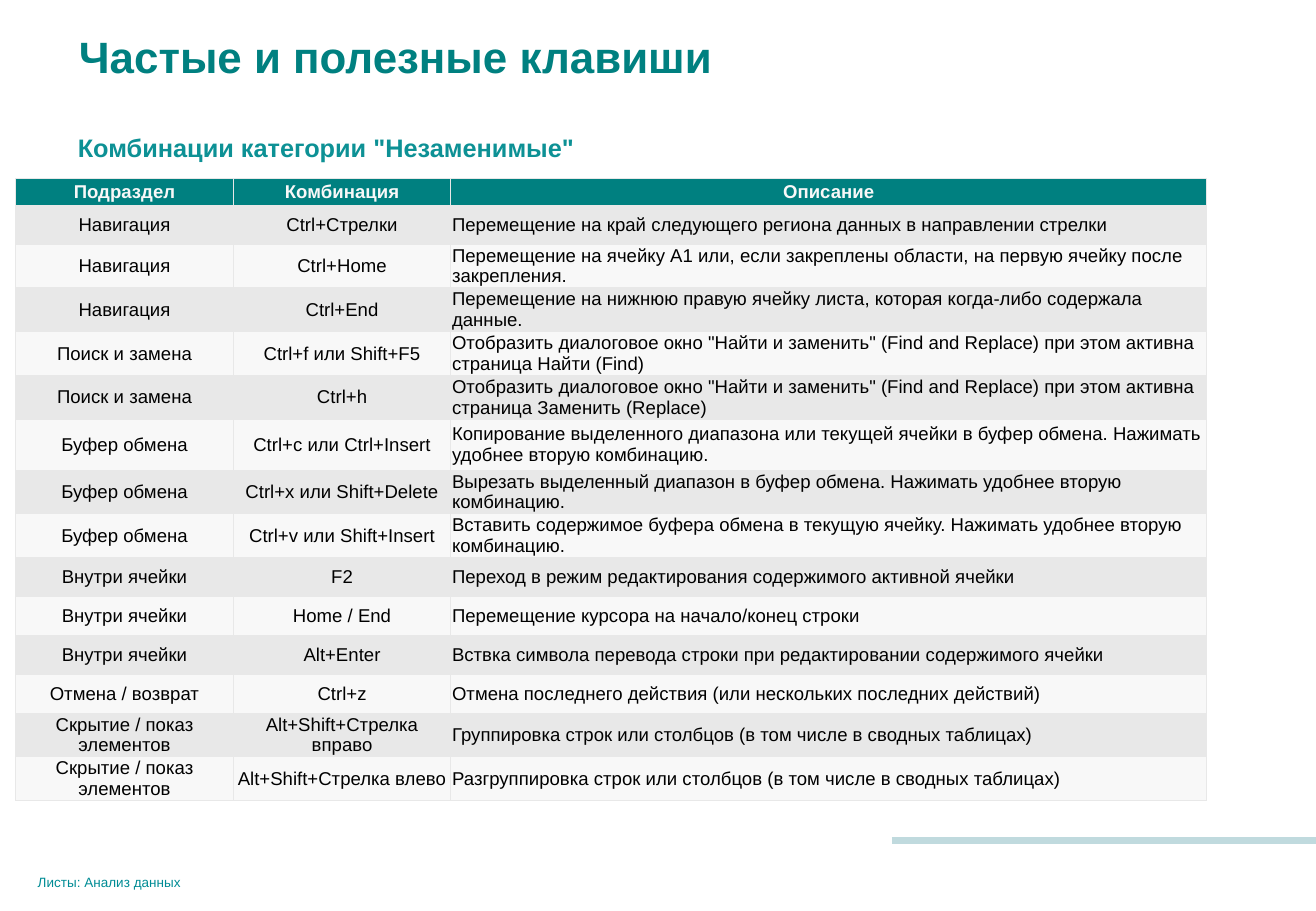
from lxml import etree
from pptx import Presentation
from pptx import util as u
from pptx.dml.color import RGBColor
from pptx.enum import shapes, text
from pptx.oxml import ns

COLOURS = {
    "title": "008080", "subtitle": "0D9195", "footer": "008C95", "rule": "C0DADE",
    "text": "000000", "dark_band": "E8E8E8", "light_band": "F8F8F8",
}
HEADINGS = ("Подраздел", "Комбинация", "Описание")
SHORTCUTS = [
    ("Навигация", "Ctrl+Стрелки",
     "Перемещение на край следующего региона данных в направлении стрелки"),
    ("Навигация", "Ctrl+Home",
     "Перемещение на ячейку A1 или, если закреплены области, на первую ячейку после закрепления."),
    ("Навигация", "Ctrl+End",
     "Перемещение на нижнюю правую ячейку листа, которая когда-либо содержала данные."),
    ("Поиск и замена", "Ctrl+f или Shift+F5",
     'Отобразить диалоговое окно "Найти и заменить" (Find and Replace) при этом активна '
     "страница Найти (Find)"),
    ("Поиск и замена", "Ctrl+h",
     'Отобразить диалоговое окно "Найти и заменить" (Find and Replace) при этом активна '
     "страница Заменить (Replace)"),
    ("Буфер обмена", "Ctrl+c или Ctrl+Insert",
     "Копирование выделенного диапазона или текущей ячейки в буфер обмена. "
     "Нажимать удобнее вторую комбинацию."),
    ("Буфер обмена", "Ctrl+x или Shift+Delete",
     "Вырезать выделенный диапазон в буфер обмена. Нажимать удобнее вторую комбинацию."),
    ("Буфер обмена", "Ctrl+v или Shift+Insert",
     "Вставить содержимое буфера обмена в текущую ячейку. Нажимать удобнее вторую комбинацию."),
    ("Внутри ячейки", "F2", "Переход в режим редактирования содержимого активной ячейки"),
    ("Внутри ячейки", "Home / End", "Перемещение курсора на начало/конец строки"),
    ("Внутри ячейки", "Alt+Enter",
     "Вствка символа перевода строки при редактировании содержимого ячейки"),
    ("Отмена / возврат", "Ctrl+z",
     "Отмена последнего действия (или нескольких последних действий)"),
    ("Скрытие / показ элементов", "Alt+Shift+Стрелка вправо",
     "Группировка строк или столбцов (в том числе в сводных таблицах)"),
    ("Скрытие / показ элементов", "Alt+Shift+Стрелка влево",
     "Разгруппировка строк или столбцов (в том числе в сводных таблицах)"),
]
COLUMN_WIDTHS = (16.53, 16.53, 57.43)
HEADER_HEIGHT, ROW_HEIGHT, TALL_ROW_HEIGHT = 2.93, 4.27, 5.6
TALL_ROW = 6


def colour(name):
    return RGBColor.from_string(COLOURS[name])


class SlideBuilder:
    """Draws on one slide; places and lengths are percents of the slide's size."""

    font = "Arial"

    def __init__(self, deck):
        self.deck = deck
        self.slide = deck.slides.add_slide(deck.slide_layouts[5])

    def across(self, percent):
        return round(self.deck.slide_width * percent / 100)

    def down(self, percent):
        return round(self.deck.slide_height * percent / 100)

    def add_words(self, frame, words, size, tint, bold=False, align=text.PP_ALIGN.LEFT):
        para = frame.paragraphs[0]
        para.alignment = align
        para.space_before = u.Pt(0)
        span = para.add_run()
        span.text = words
        span.font.name, span.font.size, span.font.bold = self.font, u.Pt(size), bold
        span.font.color.rgb = colour(tint)

    def place(self, box, left, top, width, height, inset_right=0.1, inset_top=0,
              anchor=text.MSO_ANCHOR.TOP):
        box.left, box.top = self.across(left), self.down(top)
        box.width, box.height = self.across(width), self.down(height)
        frame = box.text_frame
        frame.word_wrap = True
        frame.auto_size = text.MSO_AUTO_SIZE.NONE
        frame.vertical_anchor = anchor
        frame.margin_left = frame.margin_bottom = 0
        frame.margin_right, frame.margin_top = u.Inches(inset_right), u.Inches(inset_top)
        return frame

    def title(self, words, *area):
        frame = self.place(self.slide.shapes.title, *area, inset_top=0.04)
        self.add_words(frame, words, 26, "title", bold=True)

    def label(self, words, *area, size, tint, bold=False, **layout):
        box = self.slide.shapes.add_textbox(0, 0, 0, 0)
        self.add_words(self.place(box, *area, **layout), words, size, tint, bold)

    def rule(self, left, top, right):
        line = self.slide.shapes.add_connector(
            shapes.MSO_CONNECTOR.STRAIGHT, self.across(left), self.down(top),
            self.across(right), self.down(top))
        line.line.color.rgb = colour("rule")
        line.line.width = u.Pt(3.75)
        etree.SubElement(line._element.spPr, ns.qn("a:effectLst"))

    def border(self, cell):
        properties = cell._tc.get_or_add_tcPr()
        for side in "LRTB":
            edge = etree.SubElement(properties, ns.qn(f"a:ln{side}"), w=str(u.Pt(0.75)))
            fill = etree.SubElement(edge, ns.qn("a:solidFill"))
            etree.SubElement(fill, ns.qn("a:srgbClr"), val=COLOURS["dark_band"])

    def cell(self, cell, words, fill, tint, bold, align):
        cell.margin_left = cell.margin_right = u.Inches(0.01)
        cell.margin_top = cell.margin_bottom = u.Inches(0.01)
        cell.vertical_anchor = text.MSO_ANCHOR.MIDDLE
        self.border(cell)
        cell.fill.solid()
        cell.fill.fore_color.rgb = colour(fill)
        self.add_words(cell.text_frame, words, 11, tint, bold, align)

    def table(self, left, top, widths, heights, rows):
        table = self.slide.shapes.add_table(
            len(rows), len(widths), self.across(left), self.down(top),
            self.across(sum(widths)), self.down(sum(heights))).table
        for column, width in zip(table.columns, widths):
            column.width = self.across(width)
        for r, (row, height) in enumerate(zip(rows, heights)):
            table.rows[r].height = self.down(height)
            header = r == 0
            band = "title" if header else "dark_band" if r % 2 else "light_band"
            for c, words in enumerate(row):
                centred = header or c < len(widths) - 1
                self.cell(table.cell(r, c), words, band,
                          "light_band" if header else "text", header,
                          text.PP_ALIGN.CENTER if centred else text.PP_ALIGN.LEFT)


def main():
    deck = Presentation()
    deck.slide_width, deck.slide_height = u.Inches(10.83), u.Inches(7.5)
    page = SlideBuilder(deck)
    page.rule(67.77, 92.27, 100)
    page.label('Комбинации категории "Незаменимые"', 5.91, 14.27, 88.18, 5.2,
               size=15, tint="subtitle", bold=True, inset_top=0.02)
    page.title("Частые и полезные клавиши", 6, 2.67, 88.18, 7.2)
    heights = [HEADER_HEIGHT] + [
        TALL_ROW_HEIGHT if r == TALL_ROW else ROW_HEIGHT
        for r in range(1, len(SHORTCUTS) + 1)]
    page.table(1.2, 19.6, COLUMN_WIDTHS, heights, [HEADINGS, *SHORTCUTS])
    page.label("Листы: Анализ данных", 2.86, 91.07, 64.82, 6.67,
               size=8, tint="footer", inset_right=0, anchor=text.MSO_ANCHOR.BOTTOM)
    deck.save("out.pptx")


if __name__ == "__main__":
    main()
